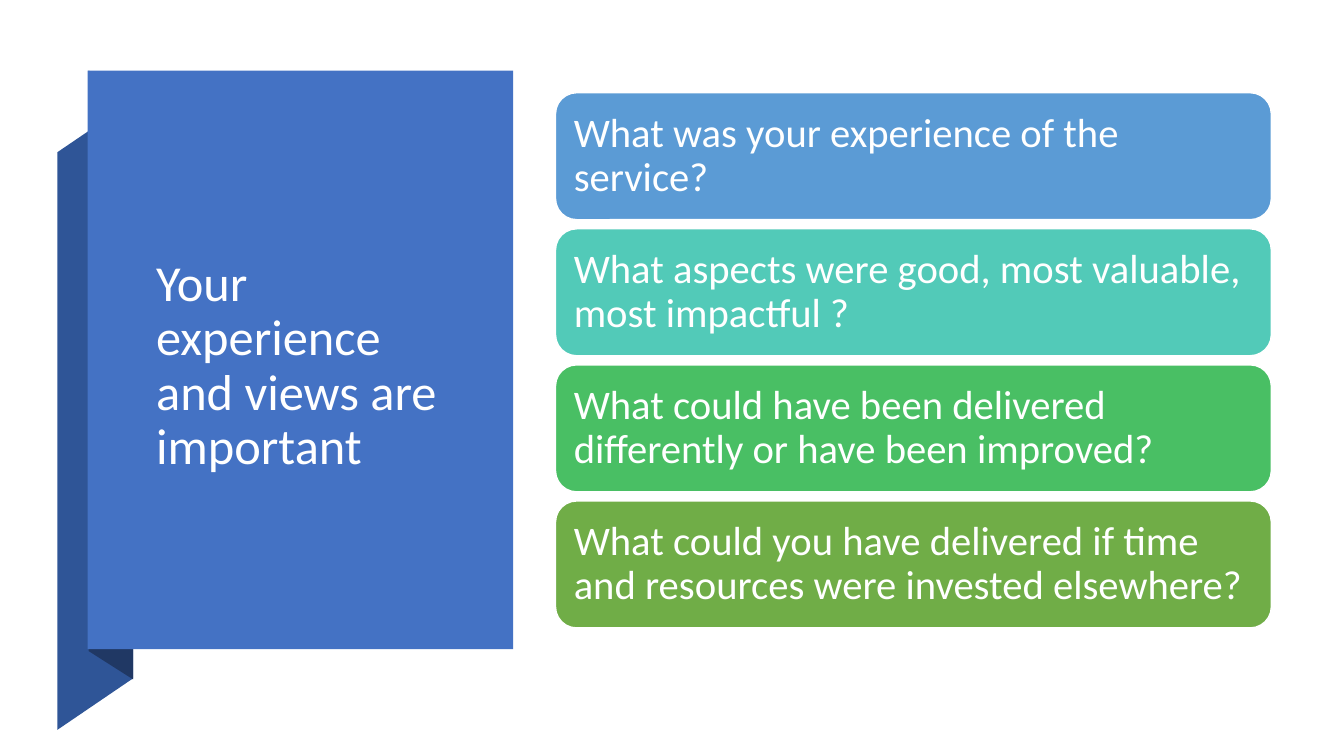
from pptx import Presentation
from pptx.dml.color import RGBColor
from pptx.enum.shapes import MSO_SHAPE
from pptx.enum.text import MSO_ANCHOR, PP_ALIGN
from pptx.util import Inches, Pt

RECT = MSO_SHAPE.RECTANGLE
ROUNDED = MSO_SHAPE.ROUNDED_RECTANGLE
MIDDLE = MSO_ANCHOR.MIDDLE
LEFT = PP_ALIGN.LEFT

COLORS = {
    "white": "FFFFFF",
    "panel": "4472C4",
    "ribbon": "2F5597",
    "fold": "203864",
    "blue": "5B9BD5",
    "teal": "52CAB8",
    "green": "49BF64",
    "olive": "70AD47",
}

QUESTIONS = [
    ("What was your experience of the service?", "blue"),
    ("What aspects were good, most valuable, most impactful ?", "teal"),
    ("What could have been delivered differently or have been improved?", "green"),
    ("What could you have delivered if time and resources were invested elsewhere?", "olive"),
]


class SlideBuilder:
    font = "Calibri"
    line_spacing = 0.9

    def __init__(self, slide):
        self.slide = slide

    def color(self, name):
        return RGBColor.from_string(COLORS[name])

    def paint(self, sp, fill, line=None):
        sp.shadow.inherit = False
        sp.fill.solid()
        sp.fill.fore_color.rgb = self.color(fill)
        if line:
            sp.line.color.rgb = self.color(line)
            sp.line.width = Pt(1)
        else:
            sp.line.fill.background()

    def shape(self, kind, x, y, w, h, fill, line=None):
        sp = self.slide.shapes.add_shape(kind, Inches(x), Inches(y), Inches(w), Inches(h))
        self.paint(sp, fill, line)
        return sp

    def polygon(self, points, fill):
        pts = [(Inches(x), Inches(y)) for x, y in points]
        fb = self.slide.shapes.build_freeform(*pts[0], scale=1.0)
        fb.add_line_segments(pts[1:], close=True)
        self.paint(fb.convert_to_shape(), fill)

    def set_text(self, sp, text, size, inset):
        tf = sp.text_frame
        tf.text = text
        tf.word_wrap = True
        tf.vertical_anchor = MIDDLE
        tf.margin_left = tf.margin_right = Inches(inset)
        tf.margin_top = tf.margin_bottom = Inches(inset)
        p = tf.paragraphs[0]
        p.alignment = LEFT
        p.line_spacing = self.line_spacing
        r = p.runs[0]
        r.font.name = self.font
        r.font.size = Pt(size)
        r.font.color.rgb = self.color("white")

    def title(self, text, x, y, w, h):
        sp = self.slide.shapes.add_textbox(Inches(x), Inches(y), Inches(w), Inches(h))
        self.set_text(sp, text, size=36, inset=0.1)

    def card(self, text, x, y, w, h, fill):
        sp = self.shape(ROUNDED, x, y, w, h, fill, line="white")
        self.set_text(sp, text, size=29, inset=0.12)


def main():
    prs = Presentation()
    prs.slide_width, prs.slide_height = Inches(13.33), Inches(7.5)
    s = SlideBuilder(prs.slides.add_slide(prs.slide_layouts[6]))

    # Folded ribbon behind the panel
    s.polygon([(0.57, 7.24), (1.32, 6.73), (1.32, 1), (0.57, 1.51)], "ribbon")
    s.polygon([(0.88, 6.46), (1.32, 6.74), (1.32, 0.99), (0.88, 0.7)], "fold")

    # Title panel
    s.shape(RECT, 0.87, 0.7, 4.22, 5.74, "panel")
    s.title("Your experience and views are important", 1.45, 1.67, 3.01, 3.94)

    # Question cards
    top, pitch = 0.92, 1.35
    for i, (question, fill) in enumerate(QUESTIONS):
        s.card(question, 5.51, top + i * pitch, 7.1, 1.26, fill)

    prs.save("out.pptx")


if __name__ == "__main__":
    main()
